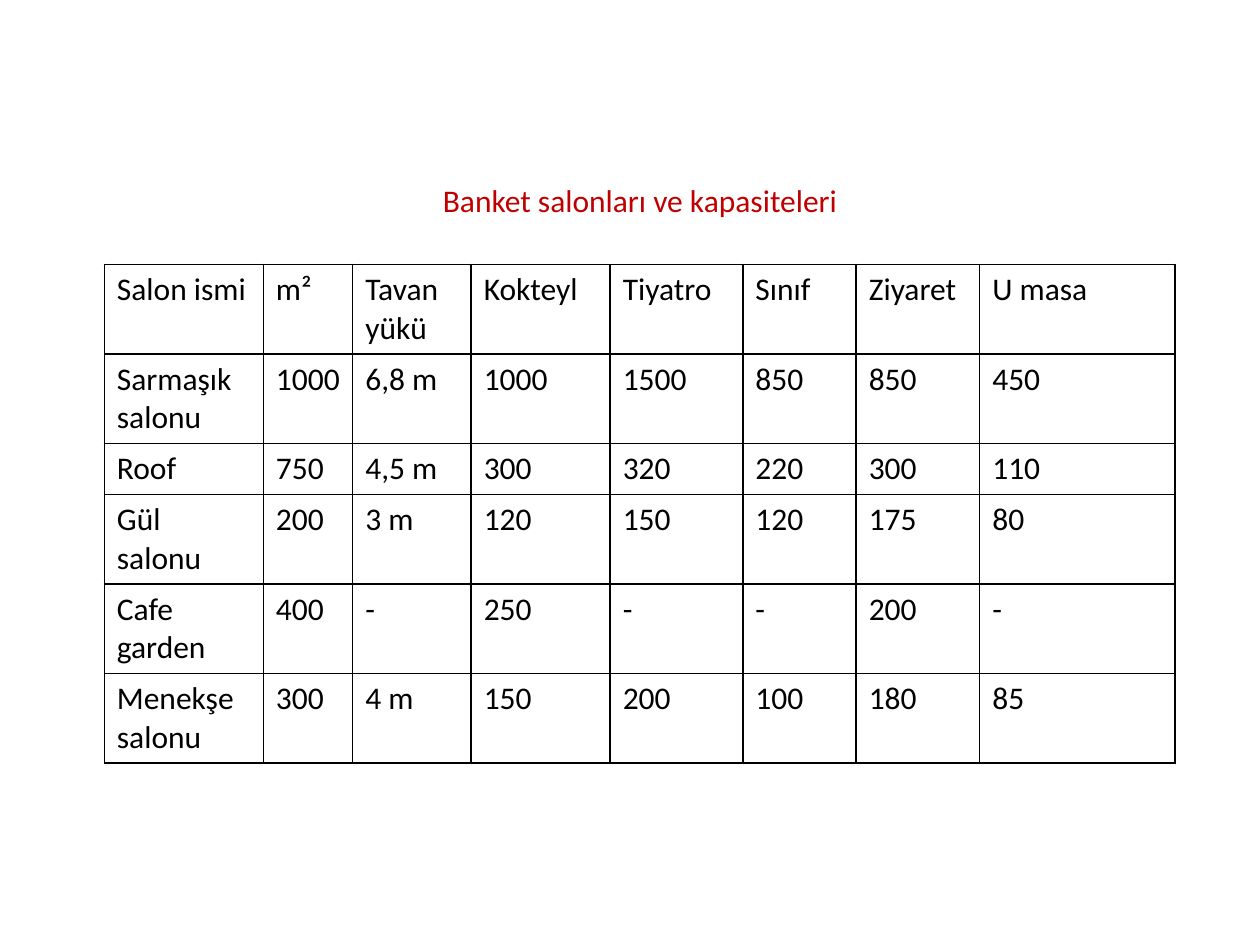
from dataclasses import dataclass

import pptx
import pptx.dml.color
import pptx.enum.text
import pptx.oxml
import pptx.oxml.ns
import pptx.util

Pt = pptx.util.Pt
RGBColor = pptx.dml.color.RGBColor


@dataclass(frozen=True)
class Theme:
    font: str = "Calibri"
    size: float = 18
    heading: str = "C00000"
    ink: str = "000000"
    border: float = 1


@dataclass(frozen=True)
class Column:
    heading: str
    width: float


@dataclass(frozen=True)
class Hall:
    values: tuple[str, ...]
    height: float = 50.6


THEME = Theme()

COLUMNS = (
    Column("Salon ismi", 90.9),
    Column("m²", 51.1),
    Column("Tavan yükü", 67.7),
    Column("Kokteyl", 79.4),
    Column("Tiyatro", 75.8),
    Column("Sınıf", 64.8),
    Column("Ziyaret", 70.6),
    Column("U masa", 111.7),
)

HALLS = (
    Hall(("Sarmaşık salonu", "1000", "6,8 m", "1000", "1500", "850", "850", "450")),
    Hall(("Roof", "750", "4,5 m", "300", "320", "220", "300", "110"), height=28),
    Hall(("Gül salonu", "200", "3 m", "120", "150", "120", "175", "80")),
    Hall(("Cafe garden", "400", "-", "250", "-", "-", "200", "-")),
    Hall(("Menekşe salonu", "300", "4 m", "150", "200", "100", "180", "85")),
)


def format_runs(text_frame, color: str) -> None:
    for paragraph in text_frame.paragraphs:
        for run in paragraph.runs:
            run.font.name = THEME.font
            run.font.size = Pt(THEME.size)
            run.font.bold = False
            run.font.color.rgb = RGBColor.from_string(color)


def add_borders(cell) -> None:
    """Put a line on each side, ahead of the fill as the schema requires."""
    properties = cell._tc.get_or_add_tcPr()
    for position, side in enumerate(("lnL", "lnR", "lnT", "lnB")):
        line = pptx.oxml.parse_xml(
            f'<a:{side} {pptx.oxml.ns.nsdecls("a")} w="{Pt(THEME.border)}">'
            f'<a:solidFill><a:srgbClr val="{THEME.ink}"/></a:solidFill></a:{side}>'
        )
        properties.insert(position, line)


def set_heading(slide, text: str) -> None:
    heading = slide.shapes.title
    heading.left, heading.top = Pt(54), Pt(100)
    heading.width, heading.height = Pt(623.5), Pt(396.7)
    frame = heading.text_frame
    frame.text = text
    frame.word_wrap = True
    frame.auto_size = pptx.enum.text.MSO_AUTO_SIZE.NONE
    frame.vertical_anchor = pptx.enum.text.MSO_ANCHOR.TOP
    frame.paragraphs[0].alignment = pptx.enum.text.PP_ALIGN.CENTER
    format_runs(frame, THEME.heading)


def add_capacity_table(slide, left: float, top: float) -> None:
    rows = (Hall(tuple(column.heading for column in COLUMNS)), *HALLS)
    capacities = slide.shapes.add_table(
        len(rows), len(COLUMNS), Pt(left), Pt(top),
        Pt(sum(column.width for column in COLUMNS)),
        Pt(sum(row.height for row in rows)),
    ).table
    capacities.first_row = False
    capacities.horz_banding = False
    for index, column in enumerate(COLUMNS):
        capacities.columns[index].width = Pt(column.width)
    for row_index, row in enumerate(rows):
        capacities.rows[row_index].height = Pt(row.height)
        for column_index, value in enumerate(row.values):
            cell = capacities.cell(row_index, column_index)
            cell.text_frame.text = value
            format_runs(cell.text_frame, THEME.ink)
            cell.fill.background()
            add_borders(cell)


def main() -> None:
    presentation = pptx.Presentation()
    presentation.slide_width, presentation.slide_height = Pt(720), Pt(540)
    slide = presentation.slides.add_slide(
        presentation.slide_layouts.get_by_name("Title Only")
    )
    set_heading(slide, "Banket salonları ve kapasiteleri")
    add_capacity_table(slide, left=59.6, top=151)
    presentation.save("out.pptx")


if __name__ == "__main__":
    main()
